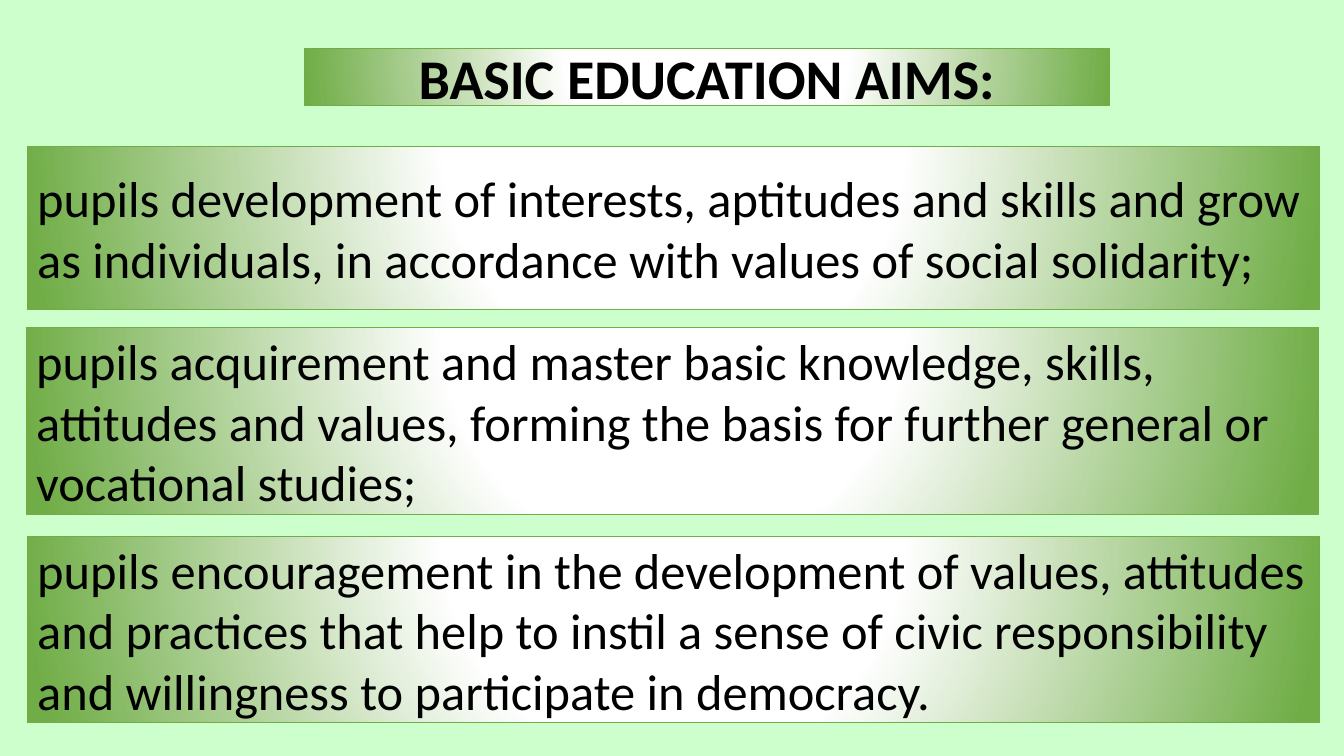
from pptx import Presentation, util as u
from pptx.dml.color import RGBColor
from pptx.enum import shapes, text
from pptx.oxml import parse_xml
from pptx.oxml.ns import nsdecls, qn

GREEN, WHITE, BLACK, MINT = "70AD47", "FFFFFF", "000000", "CCFFCC"
STOPS = [(0, WHITE), (35, WHITE), (100, GREEN)]

# Left, top, width, height and wording of each aim
AIMS = [
    (0.27, 1.45, 12.82, 1.62,
     "pupils development of interests, aptitudes and skills and grow as "
     "individuals, in accordance with values of social solidarity;"),
    (0.26, 3.25, 12.82, 1.85,
     "pupils acquirement and master basic knowledge, skills, attitudes and "
     "values, forming the basis for further general or vocational studies;"),
    (0.27, 5.32, 12.82, 1.85,
     "pupils encouragement in the development of values, attitudes and "
     "practices that help to instil a sense of civic responsibility and "
     "willingness to participate in democracy."),
]


def color(hex_code):
    return RGBColor.from_string(hex_code)


def radial_fill(sp):
    """Fill with a circular gradient, white in the middle."""
    stops = "".join(
        f'<a:gs pos="{pos * 1000}"><a:srgbClr val="{c}"/></a:gs>'
        for pos, c in STOPS)
    grad = parse_xml(
        f'<a:gradFill {nsdecls("a")} rotWithShape="1"><a:gsLst>{stops}</a:gsLst>'
        '<a:path path="circle"><a:fillToRect l="50000" t="-80000" '
        'r="50000" b="180000"/></a:path></a:gradFill>')
    sp.fill.background()
    spPr = sp._element.spPr
    spPr.replace(spPr.find(qn("a:noFill")), grad)


def add_panel(s, left, top, width, height, wording, size=36, bold=False,
              align=text.PP_ALIGN.LEFT):
    sp = s.shapes.add_shape(shapes.MSO_SHAPE.RECTANGLE, u.Inches(left),
                            u.Inches(top), u.Inches(width), u.Inches(height))
    sp.shadow.inherit = False
    radial_fill(sp)
    sp.line.color.rgb = color(GREEN)
    sp.line.width = u.Pt(0.5)

    tf = sp.text_frame
    tf.word_wrap = True
    tf.vertical_anchor = text.MSO_ANCHOR.MIDDLE
    tf.text = wording
    p = tf.paragraphs[0]
    p.alignment = align
    font = p.runs[0].font
    font.name, font.size, font.bold = "Calibri", u.Pt(size), bold
    font.color.rgb = color(BLACK)


def main():
    prs = Presentation()
    prs.slide_width, prs.slide_height = u.Inches(13.33), u.Inches(7.5)
    s = prs.slides.add_slide(prs.slide_layouts[6])

    # Background
    s.background.fill.solid()
    s.background.fill.fore_color.rgb = color(MINT)

    # Title
    add_panel(s, 3.02, 0.48, 7.98, 0.57, "BASIC EDUCATION AIMS:", size=40,
              bold=True, align=text.PP_ALIGN.CENTER)

    # Aims
    for aim in AIMS:
        add_panel(s, *aim)

    prs.save("out.pptx")


if __name__ == "__main__":
    main()
